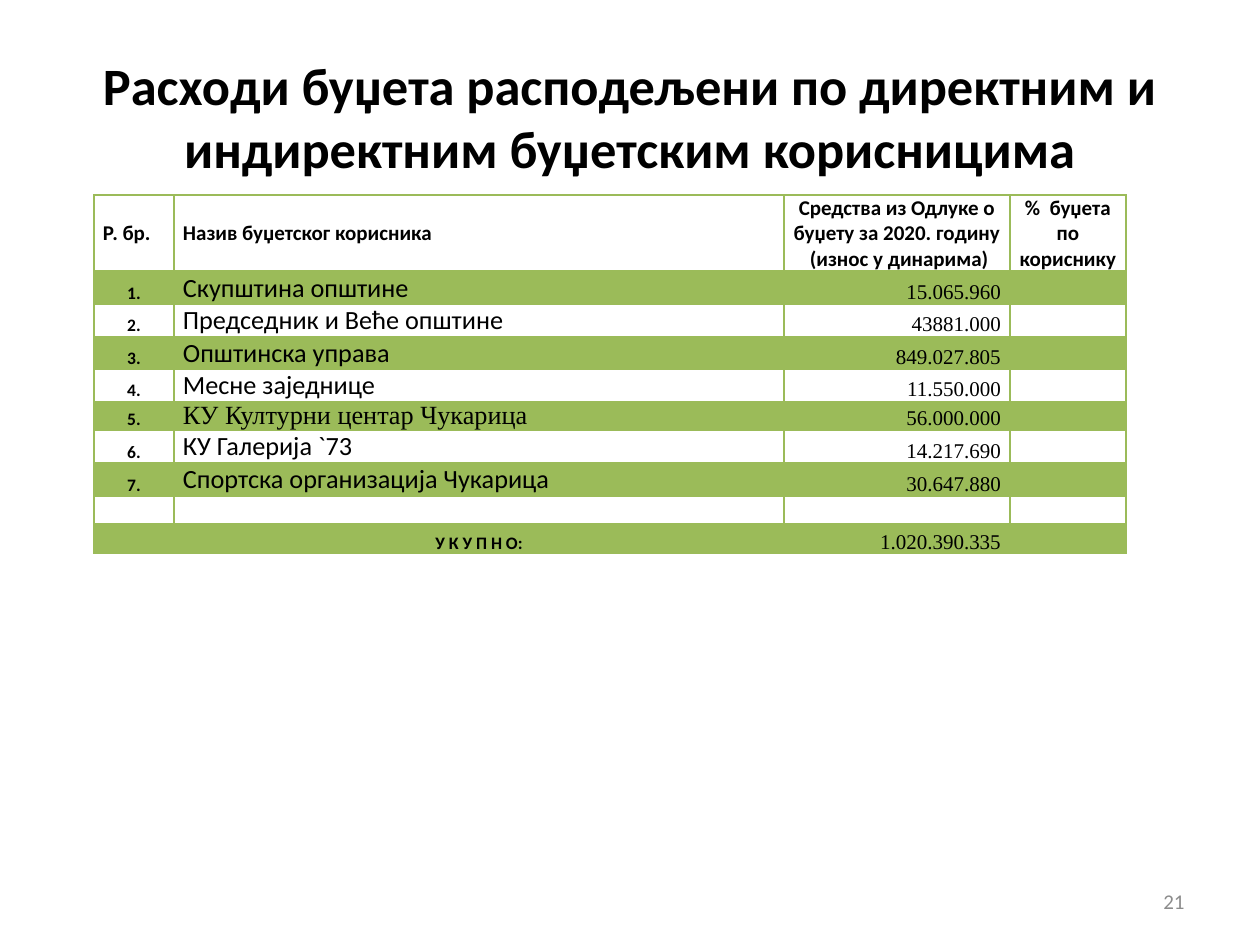
import lxml.etree
import pptx
import pptx.dml.color
import pptx.enum.text
import pptx.oxml
import pptx.oxml.ns
import pptx.util

PX_PER_INCH = 126
COLORS = {"text": "000000", "accent": "9BBB59", "number": "8C8C8C"}
BODY_FONT, SERIF_FONT = "Calibri", "Times New Roman"
ALIGN = pptx.enum.text.PP_ALIGN
ANCHOR = pptx.enum.text.MSO_ANCHOR

COLUMN_WIDTHS = [80, 610, 226, 116]
ROW_HEIGHTS = [77, 32, 32, 33, 32, 29, 32, 33, 28, 30]
HEADERS = [
    "Р. бр.",
    "Назив буџетског корисника",
    "Средства из Одлуке о буџету за 2020. годину  (износ у динарима)",
    "%  буџета по кориснику",
]
HEADER_ALIGNS = [ALIGN.LEFT, ALIGN.LEFT, ALIGN.CENTER, ALIGN.CENTER]
USERS = [
    ("Скупштина општине", "15.065.960"),
    ("Председник и Веће општине", "43881.000"),
    ("Општинска управа", "849.027.805"),
    ("Месне заједнице", "11.550.000"),
    ("КУ Културни центар Чукарица", "56.000.000"),
    ("КУ Галерија `73", "14.217.690"),
    ("Спортска организација Чукарица", "30.647.880"),
]
SERIF_USER = "КУ Културни центар Чукарица"
TOTAL = ("У К У П Н О:", "1.020.390.335")


def px(length):
    return pptx.util.Emu(round(length * 914400 / PX_PER_INCH))


def place(shape, left, top, width, height):
    shape.left, shape.top = px(left), px(top)
    shape.width, shape.height = px(width), px(height)


def write(frame, text, size, align, font=BODY_FONT, bold=False, color="text"):
    paragraph = frame.paragraphs[0]
    paragraph.alignment = align
    run = paragraph.add_run()
    run.text = text
    run.font.name = font
    run.font.size = pptx.util.Pt(size)
    run.font.bold = bold
    run.font.color.rgb = pptx.dml.color.RGBColor.from_string(COLORS[color])


def add_title(slide, text):
    title = slide.shapes.title
    place(title, 63, 38, 1134, 157)
    title.text_frame.vertical_anchor = ANCHOR.MIDDLE
    write(title.text_frame, text, 30, ALIGN.CENTER, bold=True)


def add_page_number(slide, number):
    box = slide.shapes.add_textbox(px(903), px(876), px(294), px(50))
    box.text_frame.word_wrap = True
    box.text_frame.vertical_anchor = ANCHOR.MIDDLE
    write(box.text_frame, number, 12, ALIGN.RIGHT, color="number")


def set_borders(cell, widths):
    """Draw the sides of a cell; widths maps L, R, T, B to points."""
    properties = cell._tc.get_or_add_tcPr()
    for side, points in widths.items():
        properties.append(pptx.oxml.parse_xml(
            f'<a:ln{side} {pptx.oxml.ns.nsdecls("a")} w="{pptx.util.Pt(points)}">'
            f'<a:solidFill><a:srgbClr val="{COLORS["accent"]}"/></a:solidFill>'
            f'</a:ln{side}>'))


def shade(cell, tinted):
    if not tinted:
        cell.fill.background()
        return
    cell.fill.solid()
    cell.fill.fore_color.rgb = pptx.dml.color.RGBColor.from_string(COLORS["accent"])
    tint = cell._tc.tcPr.find(".//" + pptx.oxml.ns.qn("a:srgbClr"))
    lxml.etree.SubElement(tint, pptx.oxml.ns.qn("a:alpha")).set("val", "20000")


def format_cell(cell, row):
    cell.margin_left = cell.margin_right = px(9)
    cell.margin_top = cell.margin_bottom = 0
    cell.vertical_anchor = ANCHOR.BOTTOM if row else ANCHOR.MIDDLE
    set_borders(cell, {"L": 1, "R": 1, "T": 2 if row == 1 else 1, "B": 1 if row else 2})
    shade(cell, row % 2 == 1)


def shrink_empty(cell):
    """Keep an empty cell from stretching its row."""
    paragraph = cell.text_frame.paragraphs[0]._p
    if not paragraph.r_lst:
        end = lxml.etree.SubElement(paragraph, pptx.oxml.ns.qn("a:endParaRPr"))
        end.set("sz", "1000")


def add_budget_table(slide):
    table = slide.shapes.add_table(
        len(ROW_HEIGHTS), len(COLUMN_WIDTHS), px(94), px(195),
        px(sum(COLUMN_WIDTHS)), px(sum(ROW_HEIGHTS))).table
    table.first_row = table.horz_banding = False
    for column, width in zip(table.columns, COLUMN_WIDTHS):
        column.width = px(width)
    for index, (table_row, height) in enumerate(zip(table.rows, ROW_HEIGHTS)):
        table_row.height = px(height)
        for cell in table_row.cells:
            format_cell(cell, index)

    # Header row
    for column, (header, align) in enumerate(zip(HEADERS, HEADER_ALIGNS)):
        write(table.cell(0, column).text_frame, header, 12, align, bold=True)

    # Budget users
    for row, (user, amount) in enumerate(USERS, start=1):
        font = SERIF_FONT if user == SERIF_USER else BODY_FONT
        write(table.cell(row, 0).text_frame, f"{row}.", 10, ALIGN.CENTER, bold=True)
        write(table.cell(row, 1).text_frame, user, 15, ALIGN.LEFT, font)
        write(table.cell(row, 2).text_frame, amount, 12, ALIGN.RIGHT, SERIF_FONT)

    # Total row
    last = len(ROW_HEIGHTS) - 1
    label, amount = TOTAL
    write(table.cell(last, 1).text_frame, label, 10, ALIGN.CENTER, bold=True)
    write(table.cell(last, 2).text_frame, amount, 12, ALIGN.RIGHT, SERIF_FONT)

    for cell in table.iter_cells():
        shrink_empty(cell)


def main():
    presentation = pptx.Presentation()
    presentation.slide_width, presentation.slide_height = px(1260), px(945)
    slide = presentation.slides.add_slide(presentation.slide_layouts[5])
    add_title(slide, "Расходи буџета расподељени по директним и "
                     "индиректним буџетским корисницима")
    add_budget_table(slide)
    add_page_number(slide, "21")
    presentation.save("out.pptx")


if __name__ == "__main__":
    main()
